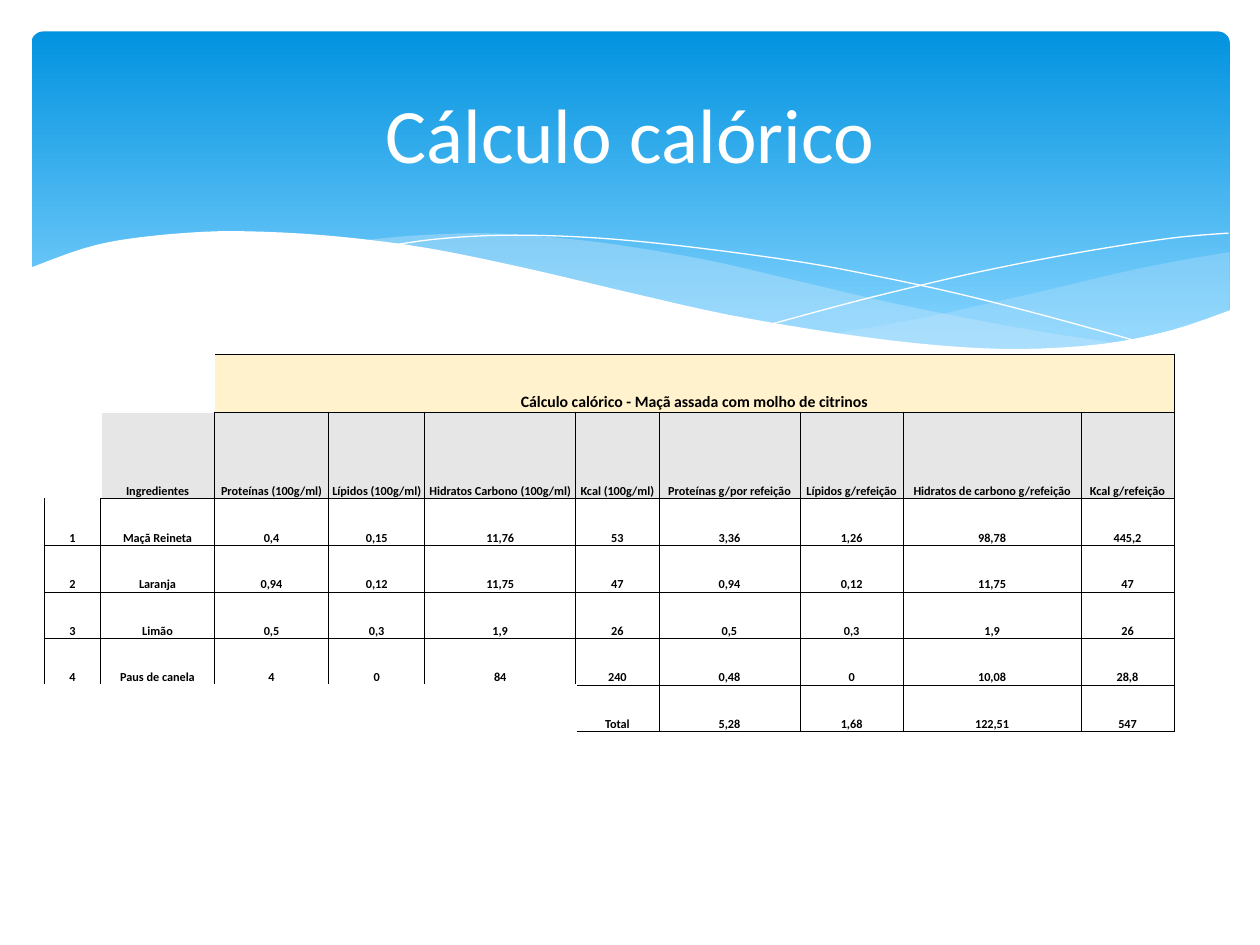
from dataclasses import dataclass

from lxml import etree
from pptx import Presentation
from pptx.dml.color import RGBColor
from pptx.enum import shapes as sh, text as tx
from pptx.oxml import ns
from pptx.util import Inches, Pt

Point = tuple[float, float]
FONT = "Calibri"
WHITE, BLACK, MIST = "FFFFFF", "000000", "C6E7FC"


@dataclass
class Wave:
    """Smooth edges in inches; filled when closed, otherwise a hairline."""
    edges: list[list[Point]]
    color: str
    alpha: int = 100
    closed: bool = True


# Waves of the banner, from back to front
WAVES = [
    Wave([[(9.76, 2), (9.35, 2.07), (8.91, 2.16), (8.32, 2.3), (7.79, 2.42),
           (7.29, 2.53), (6.61, 2.65)],
          [(6.61, 2.65), (7.05, 2.71), (7.57, 2.76), (8.03, 2.78), (8.54, 2.76),
           (8.97, 2.7), (9.35, 2.62), (9.76, 2.47)]], MIST, 29),
    Wave([[(8.93, 2.73), (8.37, 2.65), (7.75, 2.54), (7.06, 2.4), (6.29, 2.22),
           (5.69, 2.08), (5.14, 1.98), (4.65, 1.91), (4.2, 1.87), (3.8, 1.85),
           (3.28, 1.87), (2.86, 1.91)],
          [(2.86, 1.91), (3.42, 1.99), (4.04, 2.11), (4.91, 2.32), (5.66, 2.48),
           (6.34, 2.61), (6.95, 2.7), (7.48, 2.76), (8.07, 2.78), (8.48, 2.77),
           (8.93, 2.73)]], MIST, 40),
    Wave([[(3.09, 1.95), (3.44, 1.9), (3.87, 1.87), (4.33, 1.87), (4.89, 1.9),
           (5.56, 1.97), (6.36, 2.08), (6.95, 2.19), (7.6, 2.33), (8.31, 2.51),
           (9.07, 2.72)]], WHITE, closed=False),
    Wave([[(6.13, 2.57), (6.72, 2.41), (7.2, 2.29), (7.76, 2.16), (8.36, 2.04),
           (8.95, 1.94), (9.38, 1.88), (9.75, 1.85)]], WHITE, closed=False),
    Wave([[(9.77, 2.46), (9.3, 2.62), (8.75, 2.73), (8.09, 2.77), (7.44, 2.74),
           (6.68, 2.65), (5.79, 2.5), (5.03, 2.33), (4.18, 2.13), (3.4, 1.97),
           (2.71, 1.88), (2.11, 1.84), (1.61, 1.84), (1.06, 1.89), (0.67, 1.97),
           (0.23, 2.13)],
          [(0.23, 3.29), (9.77, 3.29)]], WHITE),
]

COLS = [0.45, 0.9, 0.91, 0.76, 1.2, 0.66, 1.12, 0.82, 1.41, 0.74]
ROWS = [0.46, 0.69] + [0.37] * 5
FILLS = {0: "FFF2CC", 1: "E7E6E6"}
DATA = [
    ["", "", "Cálculo calórico - Maçã assada com molho de citrinos"] + [""] * 7,
    ["", "Ingredientes", "Proteínas (100g/ml)", "Lípidos (100g/ml)",
     "Hidratos Carbono (100g/ml)", "Kcal (100g/ml)", "Proteínas g/por refeição",
     "Lípidos g/refeição", "Hidratos de carbono g/refeição", "Kcal g/refeição"],
    ["1", "Maçã Reineta", "0,4", "0,15", "11,76", "53", "3,36", "1,26", "98,78", "445,2"],
    ["2", "Laranja", "0,94", "0,12", "11,75", "47", "0,94", "0,12", "11,75", "47"],
    ["3", "Limão", "0,5", "0,3", "1,9", "26", "0,5", "0,3", "1,9", "26"],
    ["4", "Paus de canela", "4", "0", "84", "240", "0,48", "0", "10,08", "28,8"],
    [""] * 5 + ["Total", "5,28", "1,68", "122,51", "547"],
]


def rgb(color: str) -> RGBColor:
    return RGBColor.from_string(color)


def style(par, size: float, color: str, bold: bool = False) -> None:
    par.alignment = tx.PP_ALIGN.CENTER
    font = par.font
    font.name, font.size, font.bold = FONT, Pt(size), bold
    font.color.rgb = rgb(color)


def smooth(knots: list[Point], steps: int = 4) -> list[Point]:
    """Catmull-Rom points through the knots."""
    ends = [knots[0], *knots, knots[-1]]
    out = [knots[0]]
    for a, b, c, d in zip(ends, ends[1:], ends[2:], ends[3:]):
        for step in range(1, steps + 1):
            t = step / steps
            out.append(tuple(
                (2 * q + (r - p) * t + (2 * p - 5 * q + 4 * r - s) * t ** 2
                 + (3 * q - p - 3 * r + s) * t ** 3) / 2
                for p, q, r, s in zip(a, b, c, d)))
    return out


def draw_wave(slide, wave: Wave) -> None:
    dots = [(Inches(x), Inches(y)) for edge in wave.edges
            for x, y in (smooth(edge) if len(edge) > 2 else edge)]
    pen = slide.shapes.build_freeform(*dots[0])
    pen.add_line_segments(dots[1:], close=wave.closed)
    shape = pen.convert_to_shape()
    shape.shadow.inherit = False
    if not wave.closed:
        shape.fill.background()
        shape.line.color.rgb = rgb(wave.color)
        shape.line.width = 0
        return
    shape.line.fill.background()
    shape.fill.solid()
    shape.fill.fore_color.rgb = rgb(wave.color)
    if wave.alpha < 100:
        tint = shape._element.spPr.find(".//" + ns.qn("a:srgbClr"))
        etree.SubElement(tint, ns.qn("a:alpha"), val=str(wave.alpha * 1000))


def draw_banner(slide) -> None:
    back = slide.shapes.add_shape(sh.MSO_SHAPE.ROUNDED_RECTANGLE, Inches(0.25),
                                  Inches(0.25), Inches(9.51), Inches(2.7))
    back.adjustments[0] = 0.034
    back.shadow.inherit = False
    back.line.fill.background()
    back.fill.gradient()
    back.fill.gradient_angle = 270
    for stop, color, pos in zip(back.fill.gradient_stops, ("0293E0", "83D3FE"), (0, 0.9)):
        stop.color.rgb, stop.position = rgb(color), pos
    for wave in WAVES:
        draw_wave(slide, wave)


def draw_title(slide) -> None:
    title = slide.shapes.title
    title.left, title.top = Inches(0.5), Inches(0.37)
    title.width, title.height = Inches(9), Inches(1.37)
    title.text_frame.text = "Cálculo calórico"
    title.text_frame.vertical_anchor = tx.MSO_ANCHOR.MIDDLE
    style(title.text_frame.paragraphs[0], 44, WHITE)
    # Bring the title in front of the banner
    slide.shapes._spTree.append(title._element)


def frame(cell) -> None:
    """Thin black border on all four sides."""
    props = cell._tc.get_or_add_tcPr()
    for i, side in enumerate(("lnL", "lnR", "lnT", "lnB")):
        line = etree.Element(ns.qn("a:" + side), w=str(Pt(0.5)))
        fill = etree.SubElement(line, ns.qn("a:solidFill"))
        etree.SubElement(fill, ns.qn("a:srgbClr"), val=BLACK)
        props.insert(i, line)


def draw_table(slide) -> None:
    table = slide.shapes.add_table(len(ROWS), len(COLS), Inches(0.35), Inches(2.81),
                                   Inches(sum(COLS)), Inches(sum(ROWS))).table
    table.first_row = table.horz_banding = False
    for col, width in zip(table.columns, COLS):
        col.width = Inches(width)
    for row, height in zip(table.rows, ROWS):
        row.height = Inches(height)
    table.cell(0, 2).merge(table.cell(0, len(COLS) - 1))
    for r, row in enumerate(DATA):
        for c, word in enumerate(row):
            cell = table.cell(r, c)
            cell.margin_left = cell.margin_right = cell.margin_top = Inches(0.01)
            cell.margin_bottom = 0
            cell.vertical_anchor = tx.MSO_ANCHOR.BOTTOM
            cell.text = word
            style(cell.text_frame.paragraphs[0], 7 if r else 9, BLACK, True)
            used = word or cell.is_spanned
            if used and r in FILLS:
                cell.fill.solid()
                cell.fill.fore_color.rgb = rgb(FILLS[r])
            else:
                cell.fill.background()
            if used:
                frame(cell)


def main() -> None:
    deck = Presentation()
    deck.slide_width, deck.slide_height = Inches(10), Inches(7.5)
    slide = deck.slides.add_slide(deck.slide_layouts[5])
    draw_banner(slide)
    draw_title(slide)
    draw_table(slide)
    deck.save("out.pptx")


if __name__ == "__main__":
    main()
